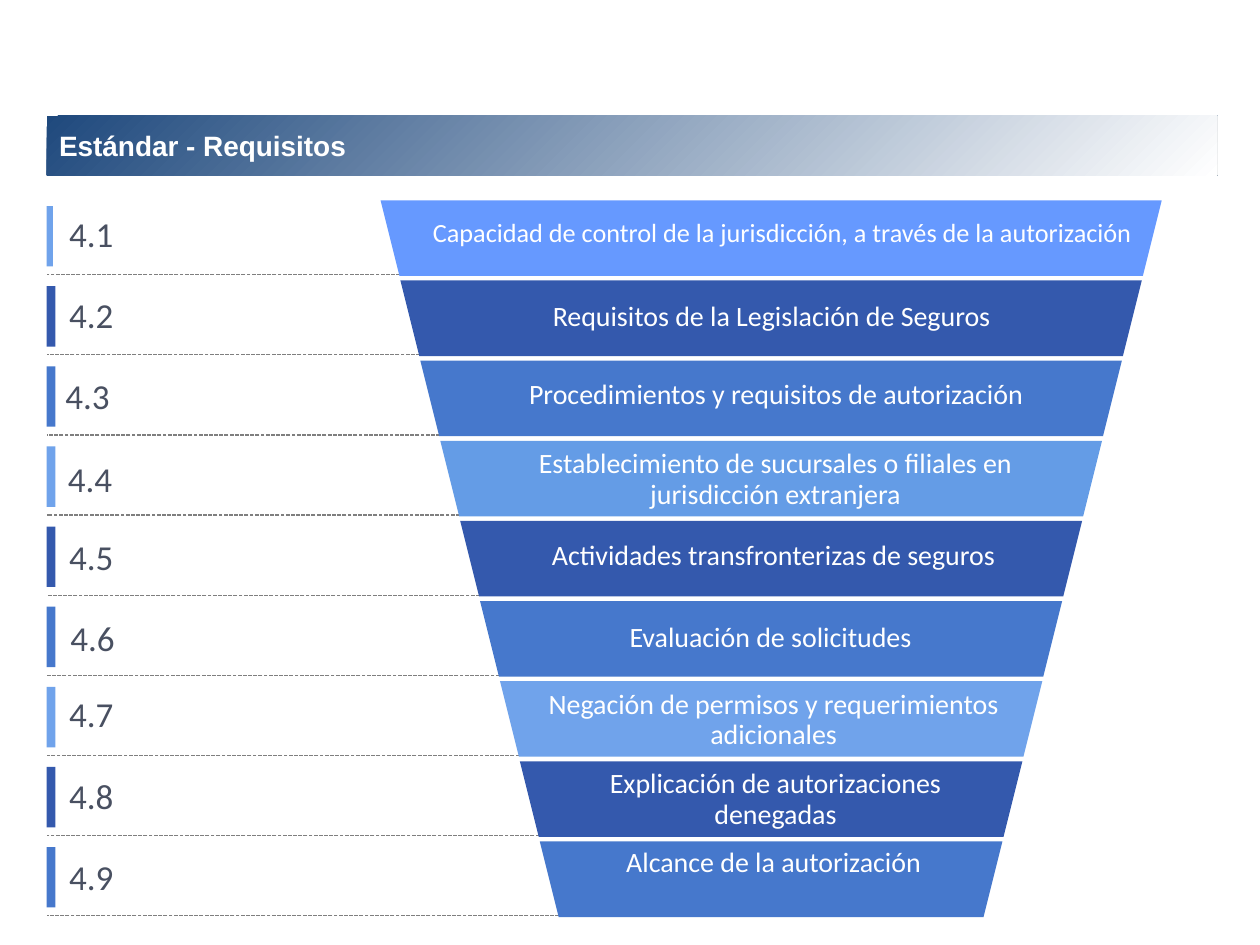
import lxml.etree
import pptx
import pptx.dml.color
import pptx.enum.dml
import pptx.enum.shapes
import pptx.enum.text
import pptx.oxml.ns
import pptx.util

Inches = pptx.util.Inches
qn = pptx.oxml.ns.qn
Shape = pptx.enum.shapes.MSO_SHAPE
Align = pptx.enum.text.PP_ALIGN


def rgb(hex_color):
    return pptx.dml.color.RGBColor.from_string(hex_color)


def write(shape, wording, color, font_format, frame_format, paragraph_format):
    """Put one styled paragraph into a shape or text box."""
    frame = shape.text_frame
    paragraph = frame.paragraphs[0]
    paragraph.text = wording
    font = paragraph.runs[0].font
    font.color.rgb = rgb(color)
    for target, values in ((frame, frame_format), (paragraph, paragraph_format), (font, font_format)):
        for name, value in values.items():
            setattr(target, name, value)


prs = pptx.Presentation()
prs.slide_width, prs.slide_height = Inches(10), Inches(7.5)
shapes = prs.slides.add_slide(prs.slide_layouts[6]).shapes

DARK, MEDIUM, LIGHT = "3459AD", "4678CC", "70A3EB"
MARGIN, FIRST_TOP, ROW_STEP = 0.37, 1.59, 0.636
FUNNEL_LEFT, FUNNEL_WIDTH, INWARD_STEP = 3.02, 6.2, 0.158
LEVEL_HEIGHT, MARKER_HEIGHT = 0.6, 0.48

# number, number left and top, label, label left, top and width, level colour, marker colour
requirements = [
    ("4.1", 0.45, 1.64, "Capacidad de control de la jurisdicción, a través de la autorización",
     3.33, 1.67, 5.76, "6699FF", LIGHT),
    ("4.2", 0.45, 2.28, "Requisitos de la Legislación de Seguros", 3.34, 2.32, 5.57, DARK, DARK),
    ("4.3", 0.42, 2.92, "Procedimientos y requisitos de autorización", 3.5, 2.97, 5.32, MEDIUM, MEDIUM),
    ("4.4", 0.44, 3.58, "Establecimiento de sucursales o filiales en jurisdicción extranjera",
     3.66, 3.52, 4.99, "649CE6", LIGHT),
    ("4.5", 0.45, 4.2, "Actividades transfronterizas de seguros", 3.85, 4.25, 4.58, DARK, DARK),
    ("4.6", 0.46, 4.84, "Evaluación de solicitudes", 3.94, 4.9, 4.35, MEDIUM, MEDIUM),
    ("4.7", 0.45, 5.45, "Negación de permisos y requerimientos adicionales",
     4.13, 5.43, 4.02, LIGHT, LIGHT),
    ("4.8", 0.45, 6.1, "Explicación de autorizaciones denegadas", 4.31, 6.06, 3.69, DARK, DARK),
    ("4.9", 0.45, 6.74, "Alcance de la autorización", 4.45, 6.68, 3.38, MEDIUM, MEDIUM),
]

# Dashed separators run behind the funnel
for row in range(len(requirements)):
    y = Inches(FIRST_TOP + row * ROW_STEP + 0.59)
    funnel_edge = FUNNEL_LEFT + row * INWARD_STEP + 0.36
    separator = shapes.add_connector(
        pptx.enum.shapes.MSO_CONNECTOR.STRAIGHT, Inches(funnel_edge), y, Inches(MARGIN), y)
    separator.line.color.rgb = rgb("7F7F7F")
    separator.line.width = pptx.util.Pt(0.75)
    separator.line.dash_style = pptx.enum.dml.MSO_LINE.SQUARE_DOT
    lxml.etree.SubElement(separator._element.spPr, qn("a:effectLst"))

# Funnel levels with their markers, labels and numbers
for row, (number, number_left, number_top, label, label_left, label_top, label_width,
          level_color, marker_color) in enumerate(requirements):
    top = FIRST_TOP + row * ROW_STEP
    level = shapes.add_shape(
        Shape.TRAPEZOID, Inches(FUNNEL_LEFT + row * INWARD_STEP), Inches(top),
        Inches(FUNNEL_WIDTH - 2 * row * INWARD_STEP), Inches(LEVEL_HEIGHT))
    level.rotation = 180
    marker = shapes.add_shape(
        Shape.RECTANGLE, Inches(MARGIN), Inches(top + 0.045),
        Inches(0.07 if row else 0.05), Inches(MARKER_HEIGHT))
    for block, color in ((level, level_color), (marker, marker_color)):
        block.shadow.inherit = False
        block.fill.solid()
        block.fill.fore_color.rgb = rgb(color)
        block.line.fill.background()

    label_box = shapes.add_textbox(
        Inches(label_left), Inches(label_top), Inches(label_width), Inches(0.35))
    write(label_box, label, "FFFFFF",
          {"name": "Calibri", "size": pptx.util.Pt(16 if row else 15)},
          {"word_wrap": True},
          {"alignment": Align.CENTER, "line_spacing": 0.9 if row > 1 else 1.0})
    number_box = shapes.add_textbox(
        Inches(number_left), Inches(number_top), Inches(3.44), Inches(0.44))
    write(number_box, number, "495061", {"name": "Calibri", "size": pptx.util.Pt(20)},
          {"word_wrap": True}, {"alignment": Align.LEFT})

# Title band, fading to white towards its lower right corner
title_band = shapes.add_shape(
    Shape.RECTANGLE, Inches(MARGIN), Inches(0.92), Inches(9.29), Inches(0.47))
title_band.shadow.inherit = False
title_band.line.fill.background()
title_band.fill.gradient()
for stop, position, color in zip(title_band.fill.gradient_stops, (0, 1), ("FFFFFF", "1F497D")):
    stop.position = position
    stop.color.rgb = rgb(color)
gradient = title_band._element.spPr.find(qn("a:gradFill"))
radial = lxml.etree.Element(qn("a:path"), {"path": "circle"})
lxml.etree.SubElement(radial, qn("a:fillToRect"), {"l": "100000", "t": "100000"})
gradient.replace(gradient.find(qn("a:lin")), radial)
write(title_band, "Estándar - Requisitos", "FFFFFF",
      {"name": "Arial", "size": pptx.util.Pt(16), "bold": True},
      {"word_wrap": True, "vertical_anchor": pptx.enum.text.MSO_ANCHOR.MIDDLE},
      {"alignment": Align.LEFT})

prs.save("out.pptx")
